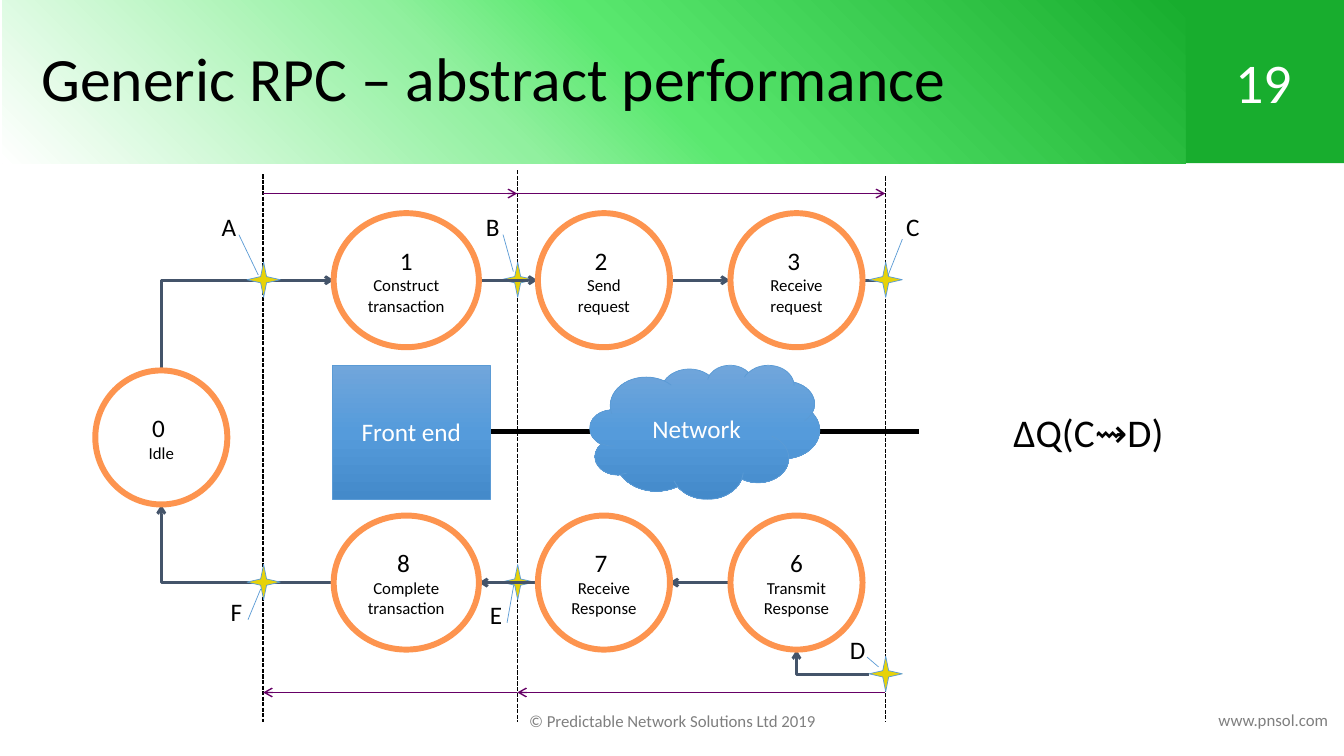
from pptx import Presentation, oxml, util as u
from pptx.dml.color import RGBColor
from pptx.enum import dml, shapes, text
from pptx.oxml.ns import nsdecls, qn

THEME = dict(
    font="Calibri", black="000000", white="FFFFFF", grey="7F7F7F",
    green="18AD2E", orange="FD944F", gold="E7D209", blue="5B9BD5",
    slate="44546A", plum="660066",
    head=44, page=40, math=28, body=18, small=12,
    banner=([(0, "FFFFFF"), (40, "91F09F"), (54, "5AE86F"), (100, "18AD2E")],
            '<a:path path="circle"><a:fillToRect t="100000" r="100000"/></a:path>'),
    steel=([(0, "71A6DB"), (50, "559BDB"), (100, "448ACA")],
           '<a:lin ang="5400000" scaled="0"/>'),
)
T = THEME
KIND = shapes.MSO_SHAPE
MID = text.MSO_ANCHOR.MIDDLE
CENTER = text.PP_ALIGN.CENTER

# Grid in inches: columns across, rows down
IDLE, A, FRONT, B, SEND, C, RECV = 1.6, 2.61, 4.03, 5.13, 5.99, 8.78, 7.9
TOP, CORE, LOW, EXIT = 2.78, 4.28, 5.78, 6.69
OUT, BACK, FLOOR = 1.92, 6.87, 7.16
WIDE, ROUND, TALL = 1.44, 1.31, 1.33
BAND = 1.63

deck = Presentation()
deck.slide_width, deck.slide_height = u.Inches(13.33), u.Inches(7.5)
slide = deck.slides.add_slide(deck.slide_layouts[5])
tree = slide.shapes


def box(x, y, w, h):
    """Turn a left, top, width, height in inches into lengths."""
    return [u.Inches(v) for v in (x, y, w, h)]


def dress(item, lines, fill=None, edge=None, width=0.5, align=CENTER):
    """Give a shape its fill, edge and text; lines hold text, size, colour."""
    item.shadow.inherit = False
    if fill is None:
        item.fill.background()
    elif isinstance(fill, str):
        item.fill.solid()
        item.fill.fore_color.rgb = RGBColor.from_string(fill)
    else:
        item.fill.gradient()
        grad = item._element.spPr.find(qn("a:gradFill"))
        stops = "".join(f'<a:gs pos="{pos * 1000}"><a:srgbClr val="{hue}"/></a:gs>'
                        for pos, hue in fill[0])
        new = oxml.parse_xml(f'<a:gradFill {nsdecls("a")} rotWithShape="1">'
                             f"<a:gsLst>{stops}</a:gsLst>{fill[1]}</a:gradFill>")
        grad.getparent().replace(grad, new)
    if edge:
        item.line.color.rgb = RGBColor.from_string(edge)
        item.line.width = u.Pt(width)
    else:
        item.line.fill.background()
    frame = item.text_frame
    frame.vertical_anchor = MID
    for n, (words, size, hue) in enumerate(lines):
        para = frame.add_paragraph() if n else frame.paragraphs[0]
        para.alignment = align
        run = para.add_run()
        run.text = words
        for key, val in dict(name=T["font"], size=u.Pt(size)).items():
            setattr(run.font, key, val)
        run.font.color.rgb = RGBColor.from_string(hue)


def link(x1, y1, x2, y2, hue=T["slate"], width=2, tip=None, dash=False):
    """Join two points; a slanting pair runs across first, then up or down."""
    bent = x1 != x2 and y1 != y2
    kind = shapes.MSO_CONNECTOR.ELBOW if bent else shapes.MSO_CONNECTOR.STRAIGHT
    wire = tree.add_connector(kind, *box(x1, y1, x2, y2))
    part = wire._element.spPr
    if bent:
        part.find(qn("a:prstGeom")).set("prst", "bentConnector2")
    wire.line.color.rgb = RGBColor.from_string(hue)
    wire.line.width = u.Pt(width)
    if dash:
        wire.line.dash_style = dml.MSO_LINE.SQUARE_DOT
    if tip:
        end = oxml.parse_xml(f'<a:{tip} {nsdecls("a")} type="arrow"/>')
        part.find(qn("a:ln")).append(end)
    part.append(oxml.parse_xml(f'<a:effectLst {nsdecls("a")}/>'))


# Banner, page number and footers
page = tree.add_shape(KIND.RECTANGLE, *box(11.72, -0.01, BAND, BAND))
dress(page, [("19", T["page"], T["white"])], T["green"])
title = tree.title
title.left, title.top, title.width, title.height = box(0.02, -0.01, 11.74, BAND)
dress(title, [("Generic RPC – abstract performance", T["head"], T["black"])],
      T["banner"], align=text.PP_ALIGN.LEFT)
title.text_frame.margin_left = u.Inches(0.39)
title.text_frame.paragraphs[0].line_spacing = 0.9
page._element.addnext(title._element)

for words, size, hue, spot in (
        ("© Predictable Network Solutions Ltd 2019", T["small"], T["grey"], (5.04, 7, 3.26, 0.3)),
        ("www.pnsol.com", T["small"], T["grey"], (11.93, 6.99, 1.4, 0.3)),
        ("∆Q(C⇝D)", T["math"], T["black"], (9.82, 4, 1.95, 0.57))):
    note = tree.add_textbox(*box(*spot))
    note.text_frame.word_wrap = False
    dress(note, [(words, size, hue)])

# Boundaries and the spans between them
for x, y in ((A, 1.73), (B, 1.69), (C, 1.75)):
    link(x, y, x, FLOOR, T["black"], 1, dash=True)
for x1, x2 in ((A, B), (B, C)):
    link(x1, OUT, x2, OUT, T["plum"], 1, "tailEnd")
    link(x1, BACK, x2, BACK, T["plum"], 1, "headEnd")

# Flow around the loop
link(3.31, LOW, IDLE, 5.01, tip="tailEnd")
link(3.31, TOP, IDLE, 3.68)
link(A, TOP, 3.31, TOP, tip="tailEnd")
link(8.62, EXIT, RECV, 6.45, tip="tailEnd")
link(8.58, TOP, 8.82, TOP)
link(6.64, TOP, 7.24, TOP, tip="tailEnd")
link(7.24, LOW, 6.64, LOW, tip="tailEnd")
link(4.87, CORE, 9.11, CORE, T["black"], 3)

# Observation points: letter, star centre, label corner, pointer
for name, x, y, left, top, aim in (
        ("A", A, TOP, 2.1, 2.11, (0.78, 0.9, 2.21, 1.54)),
        ("B", B, TOP, 4.72, 2.11, (0.78, 0.9, 2.09, 1.24)),
        ("C", C, TOP, 8.89, 2.11, (0.94, 0.2, 2.24, -0.28)),
        ("D", C, EXIT, 8.33, 6.3, (0.78, 0.9, 1.13, 1.28)),
        ("E", B, LOW, 4.76, 5.96, (0.78, 0.9, -0.62, 1.13)),
        ("F", A, LOW, 2.19, 5.93, (0.78, 0.9, -0.31, 1.32))):
    star = tree.add_shape(KIND.STAR_4_POINT, *box(x - 0.16, y - 0.18, 0.33, 0.35))
    dress(star, [], T["gold"], T["blue"])
    tag = tree.add_shape(KIND.LINE_CALLOUT_1_NO_BORDER, *box(left, top, 0.3, 0.28))
    for n, val in enumerate(aim):
        tag.adjustments[n] = val
    dress(tag, [(name, T["body"], T["black"])], edge=T["blue"])

link(4.75, TOP, 5.33, TOP, tip="tailEnd")
link(5.33, LOW, 4.75, LOW, tip="tailEnd")

# Front end and network
for words, kind, x, w in (("Front end", KIND.RECTANGLE, 3.3, 1.56),
                          ("Network", KIND.CLOUD, 5.85, 2.28)):
    node = tree.add_shape(kind, *box(x, 3.62, w, TALL))
    dress(node, [(words, T["body"], T["white"])], T["steel"], T["blue"])

# Steps, each centred on its column and row
for num, words, x, y, w in (
        ("0 ", "Idle", IDLE, 4.34, ROUND),
        ("1", "Construct transaction", FRONT, TOP, WIDE),
        ("2 ", "Send request", SEND, TOP, ROUND),
        ("3 ", "Receive request", RECV, TOP, ROUND),
        ("6", "Transmit Response", RECV, LOW, ROUND),
        ("7 ", "Receive Response", SEND, LOW, ROUND),
        ("8 ", "Complete transaction", FRONT, LOW, WIDE)):
    step = tree.add_shape(KIND.OVAL, *box(x - w / 2, y - TALL / 2, w, TALL))
    dress(step, [(num, T["body"], T["black"]), (words, T["small"], T["black"])],
          edge=T["orange"], width=4.25)

deck.save("out.pptx")
